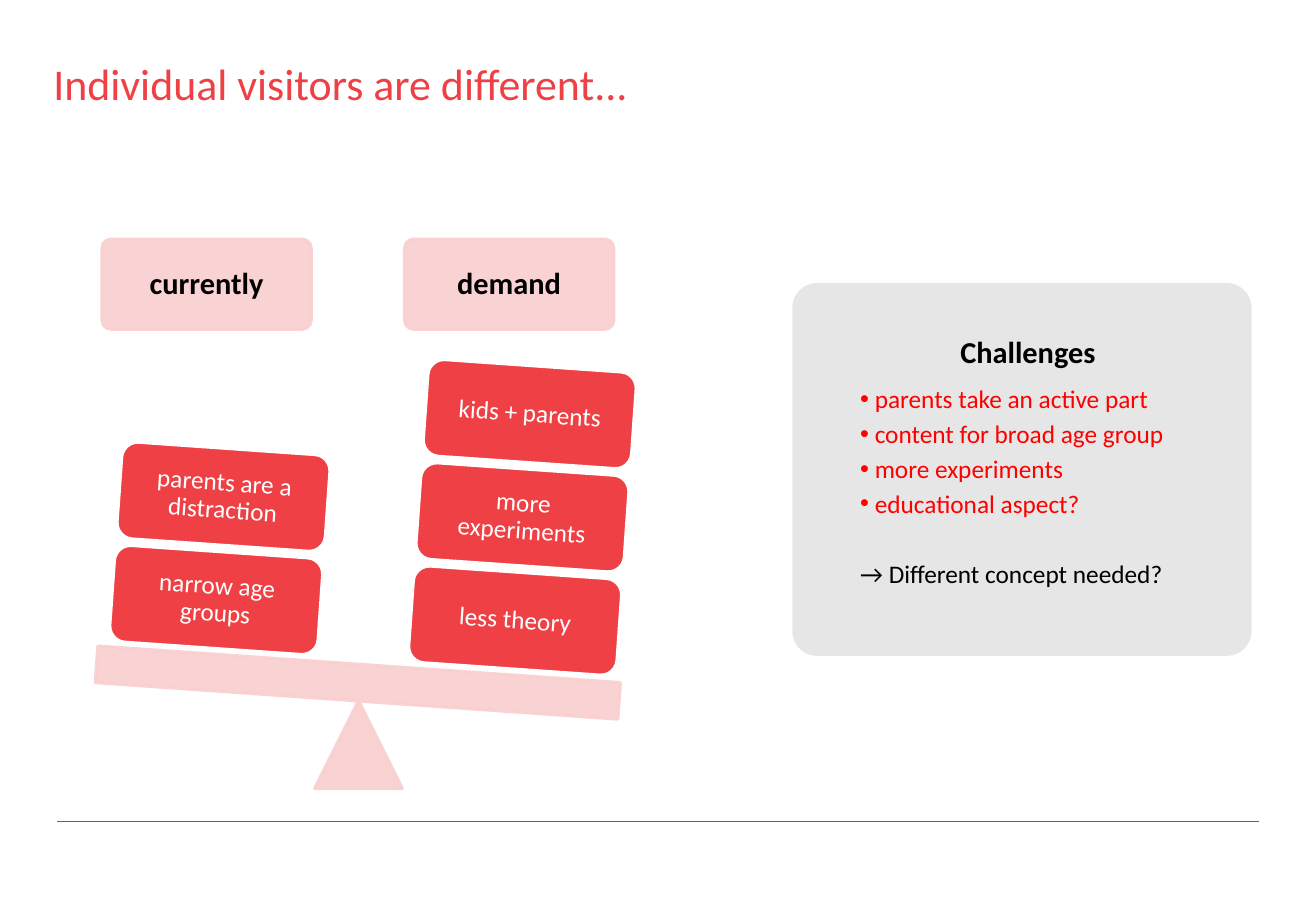
from lxml import etree
from pptx import Presentation, util as u
from pptx.dml.color import RGBColor
from pptx.enum import shapes, text
from pptx.oxml.ns import qn

HEX = {"red": "EF4145", "pink": "F9CFCF", "grey": "E6E6E6", "rule": "E82734",
       "white": "FFFFFF", "black": "000000", "point": "FF0000"}
FONT = "Calibri"
TITLE = "Individual visitors are different..."
SIDES = [
    ("currently", 84, (92, 454), ["narrow age groups", "parents are a distraction"]),
    ("demand", 333, (338, 471), ["less theory", "more experiments", "kids + parents"]),
]
HEAD = "Challenges"
POINTS = ["parents take an active part", "content for broad age group",
          "more experiments", "educational aspect?"]
CLOSE = "→ Different concept needed?"

TILT = 4
STEP_X, STEP_Y = 6, 85
SHAPE = shapes.MSO_SHAPE
MID = text.MSO_ANCHOR.MIDDLE
CENTER = text.PP_ALIGN.CENTER


def px(n):
    return u.Emu(n * 9144)


def color(name):
    return RGBColor.from_string(HEX[name])


def fade(form):
    for tone in form._element.spPr.iter(qn("a:srgbClr")):
        etree.SubElement(tone, qn("a:alpha")).set("val", "90000")


def add_form(kind, box, fill, line=None, turn=0, curve=None):
    form = slide.shapes.add_shape(kind, *map(px, box))
    form.shadow.inherit = False
    form.rotation = turn
    form.fill.solid()
    form.fill.fore_color.rgb = color(fill)
    if line:
        form.line.color.rgb = color(line)
        form.line.width = u.Pt(2)
    else:
        form.line.fill.background()
    if curve:
        form.adjustments[0] = curve
    return form


def set_frame(form, side, edge, anchor):
    frame = form.text_frame
    frame.word_wrap = True
    frame.vertical_anchor = anchor
    frame.margin_left = frame.margin_right = px(side)
    frame.margin_top = frame.margin_bottom = px(edge)
    return frame


def write(para, words, size, tone, bold=False):
    run = para.add_run()
    run.text = words
    run.font.name = FONT
    run.font.size = u.Pt(size)
    run.font.bold = bold
    run.font.color.rgb = color(tone)


def label(form, words, inset, size, tone, bold=False):
    para = set_frame(form, inset, inset, MID).paragraphs[0]
    para.alignment = CENTER
    para.line_spacing = 0.9
    write(para, words, size, tone, bold)


def add_line(frame, words, tone, before, mark=None):
    para = frame.add_paragraph()
    props = para._p.get_or_add_pPr()
    props.set("marL", str(px(52 if mark else 40)))
    props.set("indent", str(px(-12 if mark else 0)))
    if mark:
        etree.SubElement(props, qn("a:buFont")).set("typeface", "Arial")
        etree.SubElement(props, qn("a:buChar")).set("char", mark)
    para.alignment = text.PP_ALIGN.LEFT
    para.space_before = u.Pt(before)
    write(para, words, 15, tone)


deck = Presentation()
deck.slide_width, deck.slide_height = px(1083), px(750)
slide = deck.slides.add_slide(deck.slide_layouts[6])

rule = slide.shapes.add_connector(shapes.MSO_CONNECTOR.STRAIGHT,
                                  px(47), px(676), px(1036), px(676))
rule.line.color.rgb = color("rule")
rule.line.width = u.Pt(0.25)
etree.SubElement(rule._element.spPr, qn("a:effectLst"))

title = slide.shapes.add_textbox(px(34), px(6), px(975), px(125))
write(set_frame(title, 10, 5, MID).paragraphs[0], TITLE, 26, "red")

for name, left, base, blocks in SIDES:
    head = add_form(SHAPE.ROUNDED_RECTANGLE, (left, 197, 172, 74), "pink", "pink", curve=0.1)
    fade(head)
    label(head, name, 7, 18, "black", True)

fade(add_form(SHAPE.ISOSCELES_TRIANGLE, (259, 577, 72, 72), "pink", "pink"))
fade(add_form(SHAPE.RECTANGLE, (79, 547, 431, 30), "pink", "pink", TILT))

for name, left, (x, y), blocks in SIDES:
    for i, words in enumerate(blocks):
        box = (x + STEP_X * i, y - STEP_Y * i, 172, 80)
        block = add_form(SHAPE.ROUNDED_RECTANGLE, box, "red", "white", TILT)
        label(block, words, 6, 15, "white")

panel = add_form(SHAPE.ROUNDED_RECTANGLE, (652, 233, 378, 307), "grey", curve=0.067)
frame = set_frame(panel, 10, 5, text.MSO_ANCHOR.TOP)
top = frame.paragraphs[0]
top._p.get_or_add_pPr().set("marL", str(px(10)))
top.alignment = CENTER
top.line_spacing = 2.0
top.space_after = u.Pt(6)
write(top, HEAD, 18, "black", True)
for words in POINTS:
    add_line(frame, words, "point", 2.6, "•")
add_line(frame, CLOSE, "black", 23.5)

deck.save("out.pptx")
